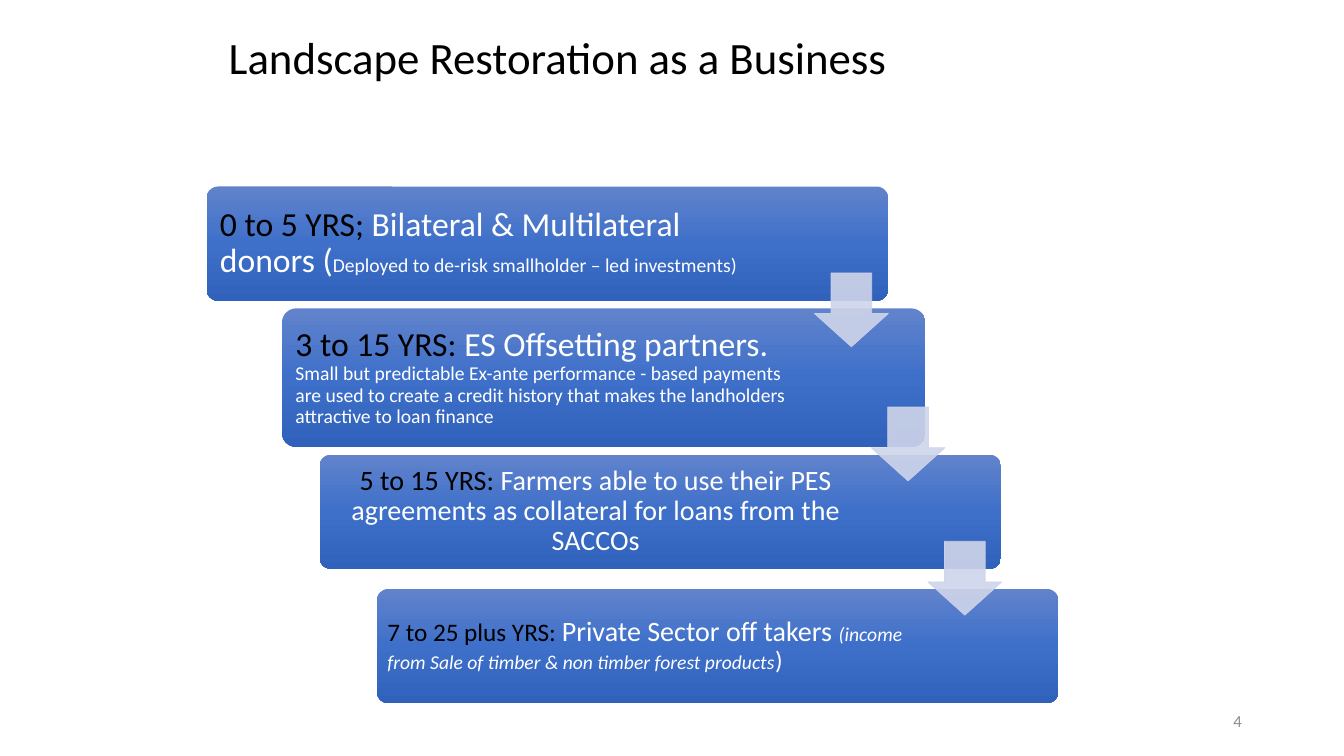
from copy import deepcopy

from lxml import etree
from pptx import Presentation
from pptx.dml.color import RGBColor
from pptx.enum.shapes import MSO_SHAPE as SHAPE
from pptx.enum.text import MSO_ANCHOR as ANCHOR, PP_ALIGN as ALIGN
from pptx.oxml.ns import qn
from pptx.util import Inches, Pt

BLACK = RGBColor(0x00, 0x00, 0x00)
WHITE = RGBColor(0xFF, 0xFF, 0xFF)
GREY = RGBColor(0x8C, 0x8C, 0x8C)
ARROW = RGBColor(0xCF, 0xD5, 0xEA)
BLUES = [RGBColor(0x61, 0x83, 0xCB), RGBColor(0x3E, 0x70, 0xCA), RGBColor(0x30, 0x62, 0xBB)]

prs = Presentation()
prs.slide_width, prs.slide_height = Inches(13.33), Inches(7.5)
s = prs.slides.add_slide(prs.slide_layouts[6])
COL, ROW = prs.slide_width / 100, prs.slide_height / 100


def cells(x, y, w, h):
    """Turn hundredths of the slide's width and height into lengths."""
    return int(x * COL), int(y * ROW), int(w * COL), int(h * ROW)


def add_text(box, runs, align=ALIGN.LEFT, spacing=0.9, inset=None):
    """Add a middle-anchored text box; runs are (text, size, colour, italic)."""
    tf = s.shapes.add_textbox(*cells(*box)).text_frame
    tf.word_wrap, tf.vertical_anchor = True, ANCHOR.MIDDLE
    if inset:
        for side in ("left", "top", "right", "bottom"):
            setattr(tf, f"margin_{side}", Inches(inset))
    p = tf.paragraphs[0]
    p.alignment, p.line_spacing = align, spacing
    for text, size, color, italic in runs:
        r = p.add_run()
        r.text = text
        r.font.color.rgb = color
        for key, value in {"name": "Calibri", "size": Pt(size), "italic": italic}.items():
            setattr(r.font, key, value)


add_text((16.28, 1.87, 64.73, 12.13),
         [("Landscape Restoration as a Business", 32, BLACK, False)])
add_text((70.65, 92.67, 22.5, 5.33), [("4", 12, GREY, False)], ALIGN.RIGHT, 1.0)

# Step box, text width, inset, alignment, runs
steps = [
    ((15.38, 24.67, 50.7, 15.1), 40.88, 0.1, ALIGN.LEFT, [
        ("0 to 5 YRS; ", 24, BLACK, False),
        ("Bilateral & Multilateral donors (", 24, WHITE, False),
        ("Deployed to de-risk smallholder – led investments)", 14, WHITE, False)]),
    ((21, 40.8, 47.85, 18.3), 38.03, 0.1, ALIGN.LEFT, [
        ("3 to 15 YRS: ", 24, BLACK, False),
        ("ES Offsetting partners. ", 24, WHITE, False),
        ("Small but predictable Ex-ante performance - based payments are used to create "
         "a credit history that makes the landholders attractive to loan finance",
         14, WHITE, False)]),
    ((23.78, 60.13, 50.7, 15.1), 40.58, 0.08, ALIGN.CENTER, [
        ("5 to 15 YRS: ", 20, BLACK, False),
        ("Farmers able to use their PES agreements as collateral for loans from the SACCOs",
         20, WHITE, False)]),
    ((28.05, 77.9, 50.7, 15.1), 40.5, 0.07, ALIGN.LEFT, [
        ("7 to 25 plus YRS: ", 18, BLACK, False),
        ("Private Sector off takers ", 20, WHITE, False),
        ("(income from Sale of timber & non timber forest products", 14, WHITE, True),
        (")", 18, WHITE, False)]),
]
PAD_X, PAD_Y = 0.25, 0.45

for (x, y, w, h), text_w, inset, align, runs in steps:
    sp = s.shapes.add_shape(SHAPE.ROUNDED_RECTANGLE, *cells(x, y, w, h))
    sp.shadow.inherit = False
    sp.adjustments[0] = 0.1
    sp.line.fill.background()
    sp.fill.gradient()
    sp.fill.gradient_angle = 270
    first = sp._element.spPr.find(".//" + qn("a:gs"))
    first.addnext(deepcopy(first))
    for i, (stop, blue) in enumerate(zip(sp.fill.gradient_stops, BLUES)):
        stop.position, stop.color.rgb = i / 2, blue
    add_text((x + PAD_X, y + PAD_Y, text_w, h - 2 * PAD_Y), runs, align, inset=inset)

for i in range(len(steps) - 1):
    sp = s.shapes.add_shape(SHAPE.DOWN_ARROW,
                            *cells(60.6 + 4.22 * i, 36.1 + 17.75 * i, 5.5, 9.77))
    sp.shadow.inherit = False
    sp.adjustments[0], sp.adjustments[1] = 0.55, 0.45
    sp.line.width = Pt(0.5)
    for fill in (sp.fill, sp.line.fill):
        fill.solid()
        fill.fore_color.rgb = ARROW
    for clr in sp._element.spPr.iter(qn("a:srgbClr")):
        etree.SubElement(clr, qn("a:alpha"), val="90000")

prs.save("out.pptx")
